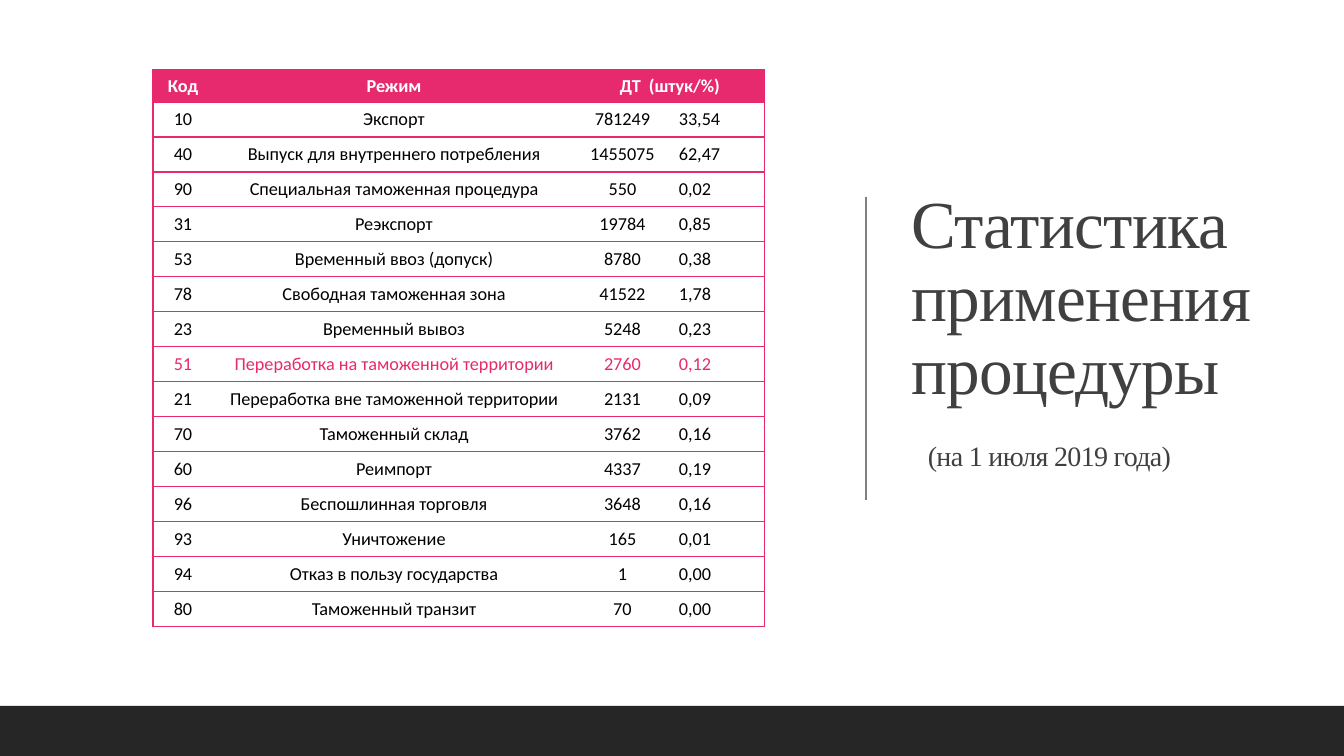
from lxml.etree import SubElement
from pptx import Presentation
from pptx.dml.color import RGBColor
from pptx.enum.shapes import MSO_CONNECTOR, MSO_SHAPE
from pptx.enum.text import MSO_ANCHOR, MSO_AUTO_SIZE, PP_ALIGN
from pptx.oxml import parse_xml
from pptx.oxml.ns import nsdecls, qn
from pptx.util import Pt

HEADING = "Статистика применения процедуры"
DATE = "(на 1 июля 2019 года)"
HEADER = ("Код", "Режим", "ДТ  (штук/%)", "")
REGIMES = [
    ("10", "Экспорт", "781249", "33,54"),
    ("40", "Выпуск для внутреннего потребления", "1455075", "62,47"),
    ("90", "Специальная таможенная процедура", "550", "0,02"),
    ("31", "Реэкспорт", "19784", "0,85"),
    ("53", "Временный ввоз (допуск)", "8780", "0,38"),
    ("78", "Свободная таможенная зона", "41522", "1,78"),
    ("23", "Временный вывоз", "5248", "0,23"),
    ("51", "Переработка на таможенной территории", "2760", "0,12"),
    ("21", "Переработка вне таможенной территории", "2131", "0,09"),
    ("70", "Таможенный склад", "3762", "0,16"),
    ("60", "Реимпорт", "4337", "0,19"),
    ("96", "Беспошлинная торговля", "3648", "0,16"),
    ("93", "Уничтожение", "165", "0,01"),
    ("94", "Отказ в пользу государства", "1", "0,00"),
    ("80", "Таможенный транзит", "70", "0,00"),
]
HIGHLIGHTED_CODE = "51"
COLORS = {"accent": "E7296D", "title": "404040", "divider": "808080",
          "footer": "262626", "text": "000000", "white": "FFFFFF"}
COLUMN_WIDTHS = (60, 362, 95, 95)
HEADER_HEIGHT, ROW_HEIGHT = 32, 35
SLIDE_WIDTH, SLIDE_HEIGHT, FOOTER_HEIGHT = 1344, 756, 50
EMU_PER_PX = 914400 / 100.8


def px(*lengths):
    """Turn pixel lengths into a list of EMU."""
    return [round(length * EMU_PER_PX) for length in lengths]


def color(name):
    return RGBColor.from_string(COLORS[name])


def add_run(paragraph, text, font_name, size, color_name):
    run = paragraph.add_run()
    run.text = text
    run.font.name = font_name
    run.font.size = Pt(size)
    run.font.color.rgb = color(color_name)
    return run


def set_borders(cell, visible):
    properties = cell._tc.get_or_add_tcPr()
    for position, side in enumerate("LRTB"):
        border = parse_xml(f'<a:ln{side} {nsdecls("a")} w="12700"/>')
        if side in visible:
            fill = SubElement(border, qn("a:solidFill"))
            SubElement(fill, qn("a:srgbClr"), val=COLORS["accent"])
        else:
            SubElement(border, qn("a:noFill"))
        properties.insert(position, border)


def add_title(slide):
    title = slide.shapes.title
    title.left, title.top, title.width, title.height = px(901, 70, 372, 557)
    frame = title.text_frame
    frame.word_wrap = True
    frame.auto_size = MSO_AUTO_SIZE.NONE
    frame.vertical_anchor = MSO_ANCHOR.MIDDLE
    frame.margin_bottom, = px(30)
    paragraph = frame.paragraphs[0]
    paragraph.alignment = PP_ALIGN.LEFT
    paragraph.line_spacing = 0.9
    heading = add_run(paragraph, HEADING, "Times New Roman", 48, "title")
    paragraph.add_line_break()
    indent = add_run(paragraph, " ", "Times New Roman", 48, "title")
    date = add_run(paragraph, DATE, "Times New Roman", 20, "title")
    for run in (heading, indent, date):
        run.font._element.set("spc", "-50")


def add_divider(slide):
    divider = slide.shapes.add_connector(
        MSO_CONNECTOR.STRAIGHT, *px(866, 197, 866, 500))
    divider.line.color.rgb = color("divider")
    divider.line.width = Pt(1)
    SubElement(divider._element.spPr, qn("a:effectLst"))


def add_footer(slide):
    footer = slide.shapes.add_shape(
        MSO_SHAPE.RECTANGLE,
        *px(0, SLIDE_HEIGHT - FOOTER_HEIGHT, SLIDE_WIDTH, FOOTER_HEIGHT))
    footer.shadow.inherit = False
    footer.fill.solid()
    footer.fill.fore_color.rgb = color("footer")
    footer.line.fill.background()


def add_statistics(slide):
    rows = [HEADER, *REGIMES]
    height = HEADER_HEIGHT + ROW_HEIGHT * len(REGIMES)
    table = slide.shapes.add_table(
        len(rows), len(HEADER), *px(153, 70, sum(COLUMN_WIDTHS), height)).table
    table.horz_banding = False
    for column, width in zip(table.columns, px(*COLUMN_WIDTHS)):
        column.width = width
    table.cell(0, 2).merge(table.cell(0, 3))
    last = len(HEADER) - 1

    for r, values in enumerate(rows):
        is_header = r == 0
        table.rows[r].height, = px(HEADER_HEIGHT if is_header else ROW_HEIGHT)
        if is_header:
            text_color = "white"
        else:
            text_color = "accent" if values[0] == HIGHLIGHTED_CODE else "text"
        for c, value in enumerate(values):
            cell = table.cell(r, c)
            is_share = c == last and not is_header
            side, edge = px(9, 5) if is_share else px(6, 3)
            cell.margin_left = cell.margin_right = side
            cell.margin_top = cell.margin_bottom = edge
            cell.vertical_anchor = MSO_ANCHOR.MIDDLE
            cell.fill.solid()
            cell.fill.fore_color.rgb = color("accent" if is_header else "white")
            at_right = c == last or cell.is_merge_origin
            set_borders(cell, "TB" + "L" * (c == 0) + "R" * at_right)
            if value:
                paragraph = cell.text_frame.paragraphs[0]
                paragraph.alignment = PP_ALIGN.LEFT if is_share else PP_ALIGN.CENTER
                run = add_run(paragraph, value, "Calibri", 13, text_color)
                run.font.bold = is_header


def main():
    presentation = Presentation()
    presentation.slide_width, presentation.slide_height = px(SLIDE_WIDTH, SLIDE_HEIGHT)
    slide = presentation.slides.add_slide(presentation.slide_layouts[5])
    add_title(slide)
    add_divider(slide)
    add_footer(slide)
    add_statistics(slide)
    presentation.save("out.pptx")


if __name__ == "__main__":
    main()
